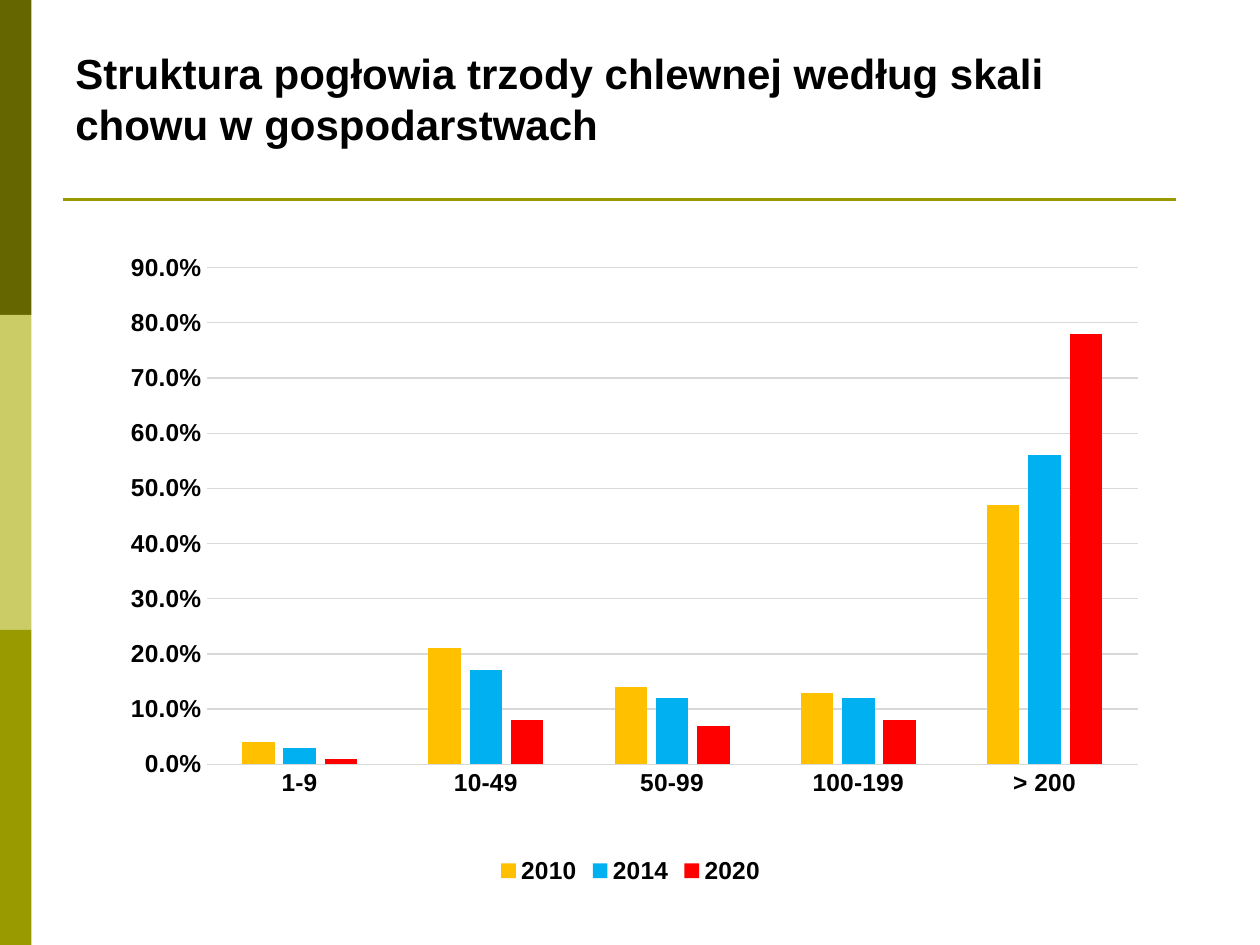
from typing import NamedTuple

from lxml import etree
from pptx import Presentation
from pptx import util as u
from pptx.chart.data import CategoryChartData
from pptx.dml.color import RGBColor
from pptx.enum import chart as charts, shapes, text
from pptx.oxml import parse_xml
from pptx.oxml.ns import nsdecls, qn

FONT = "Arial"
BLACK, OLIVE, GRID = "000000", "999900", "D9D9D9"
BAND_COLORS = ["666600", "CCCC66", OLIVE]
BAND_WIDTH = 0.25
RULE_TOP = 19 / 12
CATEGORIES = ["1-9", "10-49", "50-99", "100-199", "> 200"]


class Box(NamedTuple):
    left: float
    top: float
    width: float
    height: float

    def lengths(self) -> list[u.Length]:
        return [u.Inches(value) for value in self]


class Series(NamedTuple):
    name: str
    values: list[float]
    color: str


SERIES = [
    Series("2010", [0.04, 0.21, 0.14, 0.13, 0.47], "FFC000"),
    Series("2014", [0.03, 0.17, 0.12, 0.12, 0.56], "00B0F0"),
    Series("2020", [0.01, 0.08, 0.07, 0.08, 0.78], "FF0000"),
]


def rgb(color: str) -> RGBColor:
    return RGBColor.from_string(color)


def format_font(font, size: float, color: str = BLACK, bold: bool = True) -> None:
    font.name = FONT
    font.size = u.Pt(size)
    font.bold = bold
    font.color.rgb = rgb(color)


def format_line(line, color: str, width: float) -> None:
    line.color.rgb = rgb(color)
    line.width = u.Pt(width)


def add_band(slide, box: Box, color: str) -> None:
    shape = slide.shapes.add_shape(shapes.MSO_SHAPE.RECTANGLE, *box.lengths())
    shape.shadow.inherit = False
    shape.fill.solid()
    shape.fill.fore_color.rgb = rgb(color)
    shape.line.fill.background()


def add_rule(slide, left: float, right: float, top: float) -> None:
    connector = slide.shapes.add_connector(
        shapes.MSO_CONNECTOR.STRAIGHT,
        u.Inches(left), u.Inches(top), u.Inches(right), u.Inches(top))
    format_line(connector.line, OLIVE, 1.5)
    etree.SubElement(connector._element.spPr, qn("a:effectLst"))


def add_text(slide, box: Box, content: str, *, size: float, anchor) -> None:
    frame = slide.shapes.add_textbox(*box.lengths()).text_frame
    frame.word_wrap = True
    frame.vertical_anchor = anchor
    run = frame.paragraphs[0].add_run()
    run.text = content
    format_font(run.font, size)


def set_plot_layout(chart, layout: Box) -> None:
    """Fix the inner plot area, in percent of the chart frame."""
    plot_area = chart._chartSpace.chart.plotArea
    for existing in plot_area.findall(qn("c:layout")):
        plot_area.remove(existing)
    values = "".join(
        f'<c:{tag} val="{percent / 100:.3f}"/>' for tag, percent in zip("xywh", layout))
    plot_area.insert(0, parse_xml(
        f'<c:layout {nsdecls("c")}><c:manualLayout><c:layoutTarget val="inner"/>'
        f'<c:xMode val="edge"/><c:yMode val="edge"/>{values}'
        '</c:manualLayout></c:layout>'))


def add_column_chart(slide, box: Box) -> None:
    data = CategoryChartData(number_format="0.0%")
    data.categories = CATEGORIES
    for series in SERIES:
        data.add_series(series.name, series.values)
    chart = slide.shapes.add_chart(
        charts.XL_CHART_TYPE.COLUMN_CLUSTERED, *box.lengths(), data).chart
    chart.has_title = False
    format_font(chart.font, 14)
    set_plot_layout(chart, Box(9.7, 3.6, 88.5, 77))

    # Columns
    plot = chart.plots[0]
    plot.vary_by_categories = False
    plot.gap_width = 219
    plot.overlap = -27
    for drawn, series in zip(plot.series, SERIES):
        drawn.format.fill.solid()
        drawn.format.fill.fore_color.rgb = rgb(series.color)

    # Axes
    for axis in (chart.category_axis, chart.value_axis):
        axis.major_tick_mark = axis.minor_tick_mark = charts.XL_TICK_MARK.NONE
        format_font(axis.tick_labels.font, 14)
    format_line(chart.category_axis.format.line, GRID, 0.75)
    value_axis = chart.value_axis
    value_axis.minimum_scale, value_axis.maximum_scale = 0, 0.9
    value_axis.major_unit = 0.1
    value_axis.tick_labels.number_format = "0.0%"
    value_axis.tick_labels.number_format_is_linked = False
    value_axis.format.line.fill.background()
    format_line(value_axis.major_gridlines.format.line, GRID, 0.75)

    # Legend
    chart.has_legend = True
    chart.legend.position = charts.XL_LEGEND_POSITION.BOTTOM
    chart.legend.include_in_layout = False
    format_font(chart.legend.font, 14)


def main() -> None:
    presentation = Presentation()
    presentation.slide_width, presentation.slide_height = u.Inches(10), u.Inches(7.5)
    slide = presentation.slides.add_slide(presentation.slide_layouts[6])

    # Side bands and title rule
    band_height = 7.5 / len(BAND_COLORS)
    for index, color in enumerate(BAND_COLORS):
        add_band(slide, Box(0, index * band_height, BAND_WIDTH, band_height), color)
    add_rule(slide, 0.5, 9.33, RULE_TOP)

    # Title and chart
    add_text(slide, Box(0.5, 0.3, 9, 0.93),
             "Struktura pogłowia trzody chlewnej według skali chowu w gospodarstwach",
             size=24, anchor=text.MSO_ANCHOR.BOTTOM)
    add_column_chart(slide, Box(0.83, 1.94, 8.35, 5.12))
    presentation.save("out.pptx")


if __name__ == "__main__":
    main()
